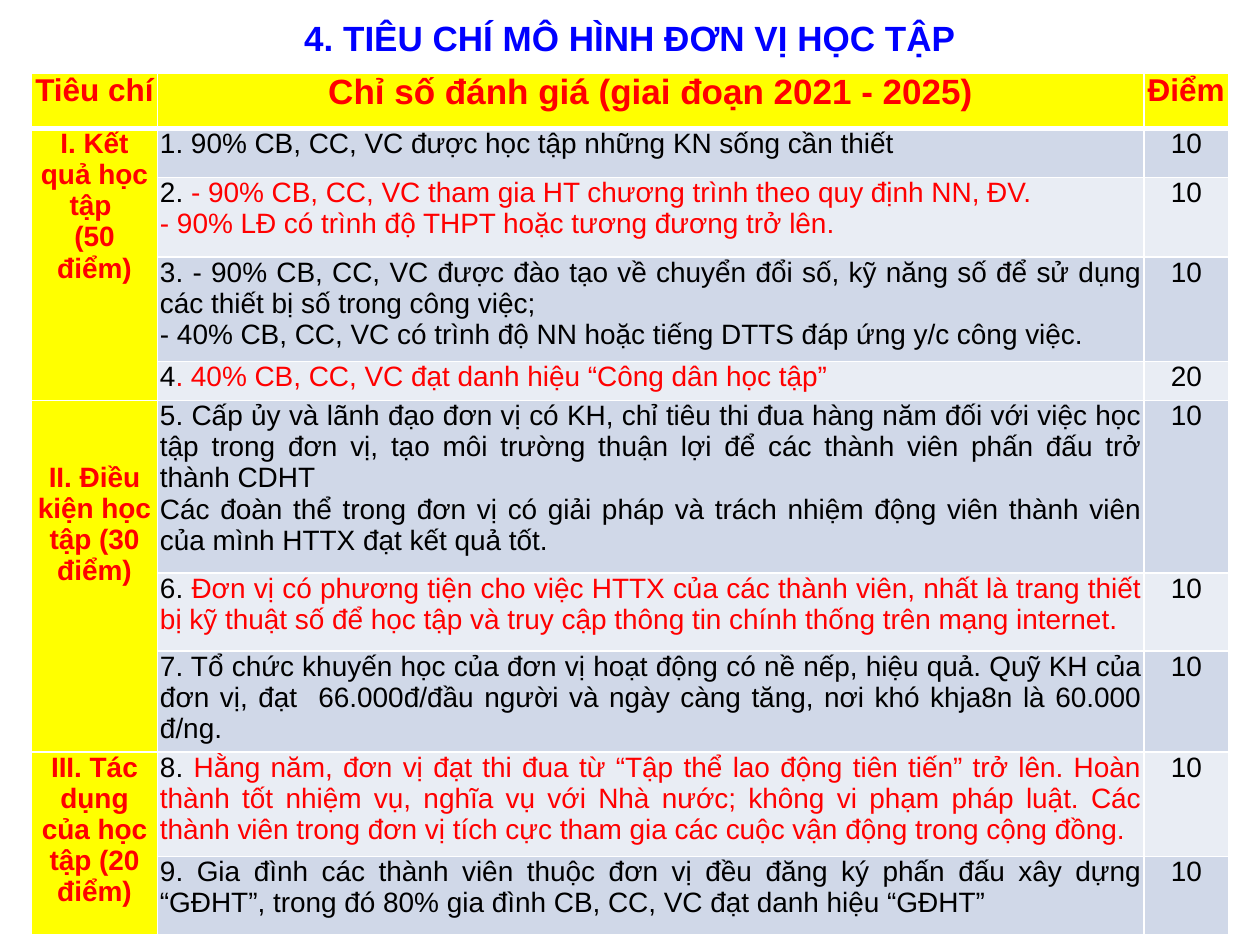
from dataclasses import dataclass

from lxml.etree import SubElement
from pptx import Presentation
from pptx.dml.color import RGBColor
from pptx.enum.text import MSO_AUTO_SIZE, PP_ALIGN
from pptx.oxml.ns import qn
from pptx.util import Inches, Pt


@dataclass(frozen=True)
class Theme:
    font: str = "Arial"
    title: str = "0000FF"
    accent: str = "FF0000"
    body: str = "000000"
    label_fill: str = "FFFF00"
    bands: tuple = ("E9EDF4", "D0D8E8")
    border: str = "FFFFFF"
    large: int = 20
    medium: int = 18
    small: int = 16


HEADERS = ["Tiêu chí", "Chỉ số đánh giá (giai đoạn 2021 - 2025)", "Điểm"]
COLUMN_WIDTHS = [1, 7.83, 0.67]
ROW_HEIGHTS = [0.44, 0.39, 0.63, 0.83, 0.31, 1.37, 0.62, 0.8, 0.83, 0.62]
SECTIONS = [
    (["I. Kết quả học tập ", "(50 điểm)"], 4, 0),
    (["II. Điều kiện học tập (30 điểm)"], 3, 0.49),
    (["III. Tác dụng của học tập (20 điểm)"], 2, 0),
]
CRITERIA = [
    ("", ["1. 90% CB, CC, VC được học tập những KN sống cần thiết"], "10"),
    ("2. ", ["- 90% CB, CC, VC tham gia HT chương trình theo quy định NN, ĐV.",
             "- 90% LĐ có trình độ THPT hoặc tương đương trở lên."], "10"),
    ("", ["3. - 90% CB, CC, VC được đào tạo về chuyển đổi số, kỹ năng số để sử dụng "
          "các thiết bị số trong công việc;",
          "- 40% CB, CC, VC có trình độ NN hoặc tiếng DTTS đáp ứng y/c công việc."], "10"),
    ("4", [". 40% CB, CC, VC đạt danh hiệu “Công dân học tập”"], "20"),
    ("", ["5. Cấp ủy và lãnh đạo đơn vị có KH, chỉ tiêu thi đua hàng năm đối với việc học "
          "tập trong đơn vị, tạo môi trường thuận lợi để các thành viên phấn đấu trở "
          "thành CDHT",
          "Các đoàn thể trong đơn vị có giải pháp và trách nhiệm động viên thành viên "
          "của mình HTTX đạt kết quả tốt."], "10"),
    ("6. ", ["Đơn vị có phương tiện cho việc HTTX của các thành viên, nhất là trang thiết "
             "bị kỹ thuật số để học tập và truy cập thông tin chính thống trên mạng "
             "internet."], "10"),
    ("", ["7. Tổ chức khuyến học của đơn vị hoạt động có nề nếp, hiệu quả. Quỹ KH của "
          "đơn vị, đạt  66.000đ/đầu người và ngày càng tăng, nơi khó khja8n là 60.000 "
          "đ/ng."], "10"),
    ("8. ", ["Hằng năm, đơn vị đạt thi đua từ “Tập thể lao động tiên tiến” trở lên. Hoàn "
             "thành tốt nhiệm vụ, nghĩa vụ với Nhà nước; không vi phạm pháp luật. Các "
             "thành viên trong đơn vị tích cực tham gia các cuộc vận động trong cộng "
             "đồng."], "10"),
    ("", ["9. Gia đình các thành viên thuộc đơn vị đều đăng ký phấn đấu xây dựng "
          "“GĐHT”, trong đó 80% gia đình CB, CC, VC đạt danh hiệu “GĐHT”"], "10"),
]


def write(para, text, *, font, size, color, bold=False, align=PP_ALIGN.CENTER):
    para.alignment = align
    span = para.add_run()
    span.text = text
    span.font.name = font
    span.font.size = Pt(size)
    span.font.bold = bold
    span.font.color.rgb = RGBColor.from_string(color)


class PageBuilder:
    def __init__(self, deck, theme):
        self.deck = deck
        self.theme = theme
        self.page = deck.slides.add_slide(deck.slide_layouts[6])

    def area(self, left, top, width, height):
        across, down = self.deck.slide_width, self.deck.slide_height
        return (int(left * across), int(top * down),
                int(width * across), int(height * down))

    def title(self, text, *place):
        box = self.page.shapes.add_textbox(*self.area(*place))
        frame = box.text_frame
        frame.word_wrap = True
        frame.auto_size = MSO_AUTO_SIZE.SHAPE_TO_FIT_TEXT
        write(frame.paragraphs[0], text, font=self.theme.font, size=self.theme.large,
              color=self.theme.title, bold=True)

    def table(self, widths, heights, *place):
        frame = self.page.shapes.add_table(len(heights), len(widths), *self.area(*place))
        table = frame.table
        for column, width in zip(table.columns, widths):
            column.width = Inches(width)
        for row, height in zip(table.rows, heights):
            row.height = Inches(height)
        for index, row in enumerate(table.rows):
            for cell in row.cells:
                self.borders(cell, top=3 if index == 1 else 1, bottom=1 if index else 3)
        return table

    def borders(self, cell, top, bottom):
        properties = cell._tc.get_or_add_tcPr()
        for side, width in (("L", 1), ("R", 1), ("T", top), ("B", bottom)):
            line = SubElement(properties, qn(f"a:ln{side}"), w=str(Pt(width)))
            fill = SubElement(line, qn("a:solidFill"))
            SubElement(fill, qn("a:srgbClr"), val=self.theme.border)

    def cell(self, cell, lines, fill, *, lead="", top=0, **style):
        cell.margin_left = cell.margin_right = Inches(0.02)
        cell.margin_top, cell.margin_bottom = Inches(top), 0
        cell.fill.solid()
        cell.fill.fore_color.rgb = RGBColor.from_string(fill)
        style = {"font": self.theme.font, "size": self.theme.small, **style}
        frame = cell.text_frame
        for index, text in enumerate(lines):
            para = frame.add_paragraph() if index else frame.paragraphs[0]
            if lead and index == 0:
                write(para, lead, **{**style, "color": self.theme.body})
            write(para, text, **style)

    def label(self, cell, lines, **style):
        self.cell(cell, lines, self.theme.label_fill,
                  color=self.theme.accent, bold=True, **style)

    def criterion(self, table, row, lead, lines, points):
        band = self.theme.bands[row % 2]
        color = self.theme.accent if lead else self.theme.body
        self.cell(table.cell(row, 1), lines, band, lead=lead, color=color,
                  align=PP_ALIGN.JUSTIFY)
        self.cell(table.cell(row, 2), [points], band, color=self.theme.body)


def main():
    deck = Presentation()
    deck.slide_width, deck.slide_height = Inches(10), Inches(7.5)
    theme = Theme()
    builder = PageBuilder(deck, theme)
    table = builder.table(COLUMN_WIDTHS, ROW_HEIGHTS,
                          0.25 / 10, 0.58 / 7.5, 9.5 / 10, 6.84 / 7.5)
    for column, text in enumerate(HEADERS):
        size = theme.large if column == 1 else theme.medium
        builder.label(table.cell(0, column), [text], size=size)
    start = 1
    for lines, count, top in SECTIONS:
        table.cell(start, 0).merge(table.cell(start + count - 1, 0))
        builder.label(table.cell(start, 0), lines, top=top)
        start += count
    for row, (lead, lines, points) in enumerate(CRITERIA, 1):
        builder.criterion(table, row, lead, lines, points)
    builder.title("4. TIÊU CHÍ MÔ HÌNH ĐƠN VỊ HỌC TẬP",
                  2.25 / 10, 0.08 / 7.5, 5.5 / 10, 0.44 / 7.5)
    deck.save("out.pptx")


if __name__ == "__main__":
    main()
